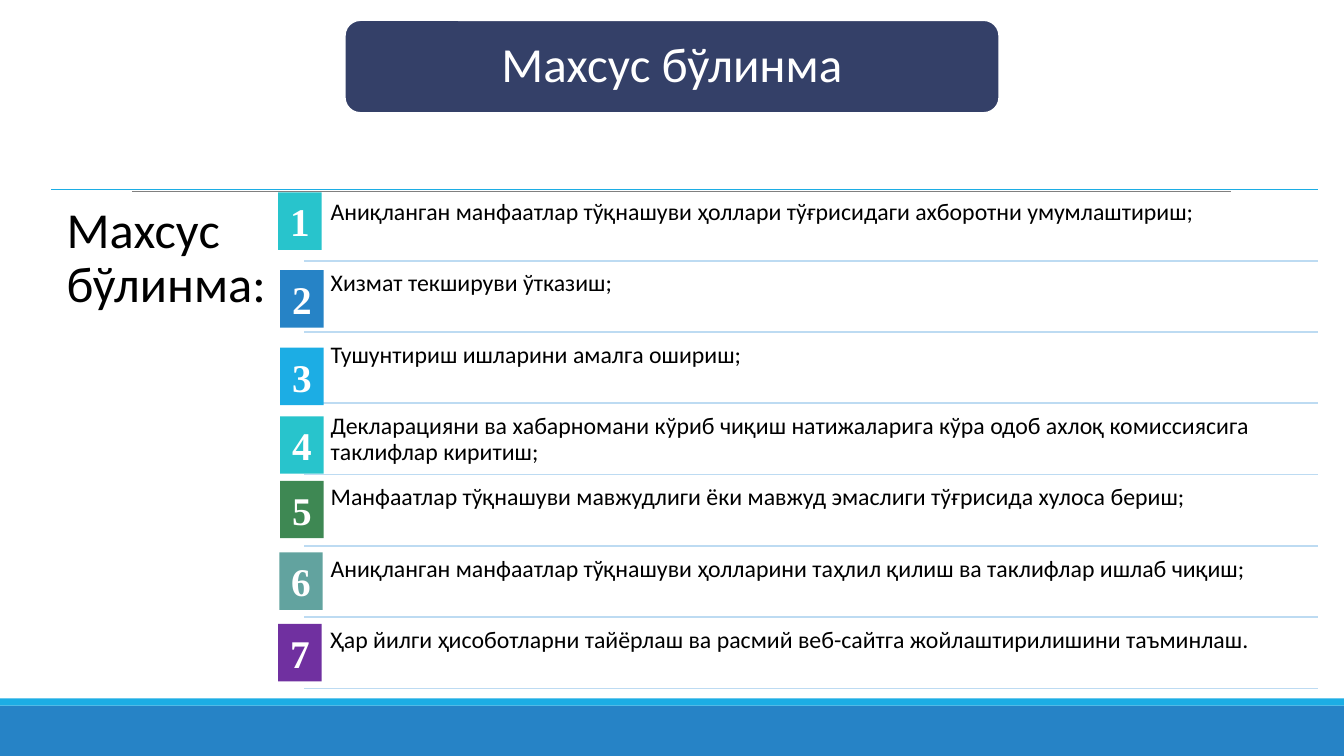
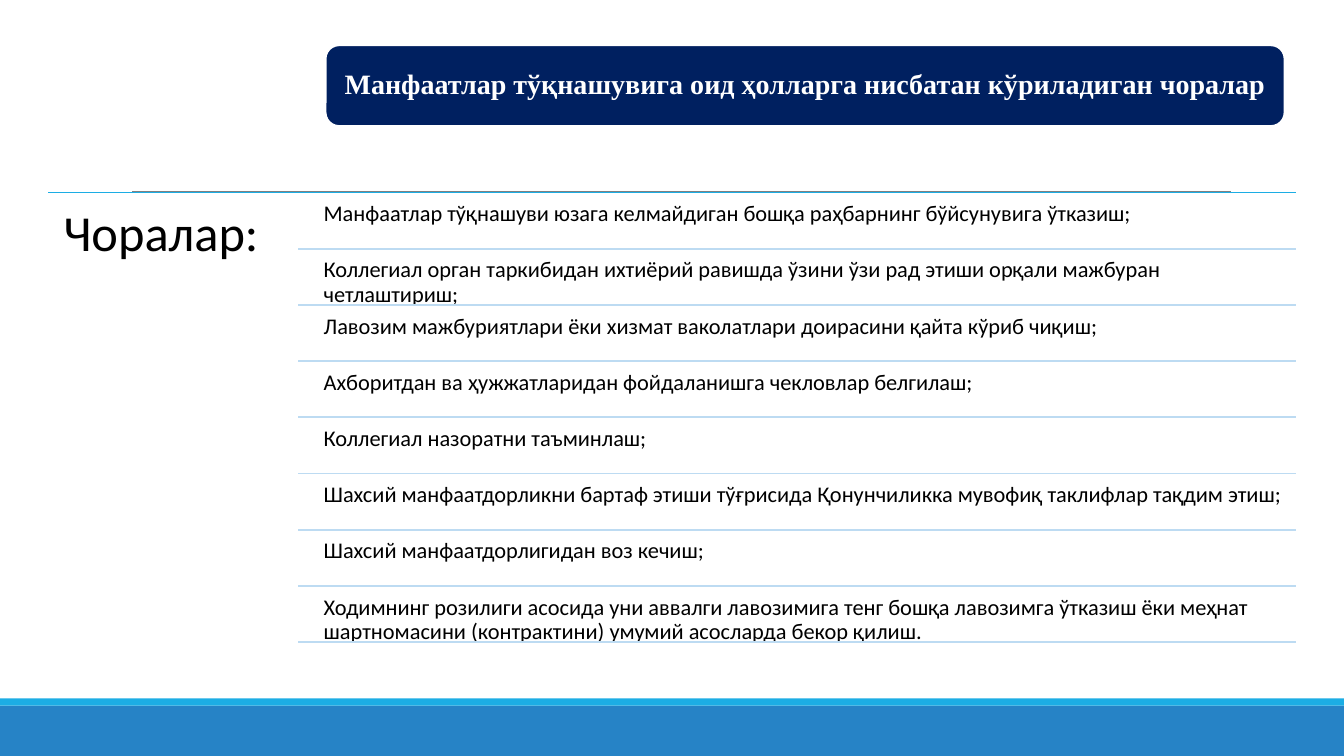
"""Build two slides about the special unit and conflict-of-interest measures."""
from lxml import etree
from pptx import Presentation
from pptx.dml.color import RGBColor
from pptx.enum.shapes import MSO_CONNECTOR as Connector, MSO_SHAPE as Preset
from pptx.enum.text import MSO_ANCHOR as Anchor, MSO_AUTO_SIZE as AutoSize, PP_ALIGN as Align
from pptx.oxml.ns import qn
from pptx.util import Inches, Pt

WIDTH, HEIGHT = 13.33, 7.5
BLUE, CYAN, TEAL, PALE = "2683C6", "1CADE4", "28C4CC", "BDDBF2"
GREY, WHITE, BLACK = "808080", "FFFFFF", "000000"
SANS, SERIF = "Calibri", "Times New Roman"
BADGE_SIZE = (0.43, 0.57)

SECTIONS = [
    {
        "title": "Махсус бўлинма",
        "banner": (3.42, 0.2, 6.49, 0.92), "banner_fill": "344068",
        "title_format": {"size": 35, "font": SANS},
        "heading": "Махсус бўлинма:",
        "left": 0.51, "right": 13.07, "top": 1.88, "bottom": 6.83,
        "rule_left": 3.02, "text_left": 3.21, "size": 17,
        "items": [
            "Аниқланган манфаатлар тўқнашуви ҳоллари тўғрисидаги ахборотни умумлаштириш;",
            "Хизмат текшируви ўтказиш;",
            "Тушунтириш ишларини амалга ошириш;",
            "Декларацияни ва хабарномани кўриб чиқиш натижаларига кўра одоб ахлоқ "
            "комиссиясига таклифлар киритиш;",
            "Манфаатлар тўқнашуви мавжудлиги ёки мавжуд эмаслиги тўғрисида хулоса бериш;",
            "Аниқланган манфаатлар тўқнашуви ҳолларини таҳлил қилиш ва таклифлар ишлаб чиқиш;",
            "Ҳар йилги ҳисоботларни тайёрлаш ва расмий веб-сайтга жойлаштирилишини таъминлаш.",
        ],
        "badges": [
            (2.76, 1.91, TEAL), (2.78, 2.68, BLUE), (2.78, 3.45, CYAN), (2.78, 4.13, TEAL),
            (2.78, 4.77, "3E8853"), (2.77, 5.48, "62A39F"), (2.76, 6.19, "7030A0"),
        ],
    },
    {
        "title": "Манфаатлар тўқнашувига оид ҳолларга нисбатан кўриладиган чоралар",
        "banner": (3.23, 0.45, 9.51, 0.8), "banner_fill": "002060",
        "title_format": {"size": 20, "font": SERIF, "bold": True},
        "heading": "Чоралар:",
        "left": 0.48, "right": 12.85, "top": 1.91, "bottom": 6.37,
        "rule_left": 2.96, "text_left": 3.14, "size": 16,
        "items": [
            "Манфаатлар тўқнашуви юзага келмайдиган бошқа раҳбарнинг бўйсунувига ўтказиш;",
            "Коллегиал орган таркибидан ихтиёрий равишда ўзини ўзи рад этиши орқали "
            "мажбуран четлаштириш;",
            "Лавозим мажбуриятлари ёки хизмат ваколатлари доирасини қайта кўриб чиқиш;",
            "Ахборитдан ва ҳужжатларидан фойдаланишга чекловлар белгилаш;",
            "Коллегиал назоратни таъминлаш;",
            "Шахсий манфаатдорликни бартаф этиши тўғрисида Қонунчиликка мувофиқ "
            "таклифлар тақдим этиш;",
            "Шахсий манфаатдорлигидан воз кечиш;",
            "Ходимнинг розилиги асосида уни аввалги лавозимига тенг бошқа лавозимга ўтказиш "
            "ёки меҳнат шартномасини (контрактини) умумий асосларда бекор қилиш.",
        ],
        "badges": [],
    },
]


def color(code):
    return RGBColor.from_string(code)


def write(holder, text, size, font=SANS, fill=BLACK, bold=False, align=Align.LEFT,
          anchor=Anchor.TOP, inset=0.07, spacing=0.9):
    frame = holder.text_frame
    frame.text = text
    frame.word_wrap = True
    frame.auto_size = AutoSize.NONE
    frame.vertical_anchor = anchor
    frame.margin_left = frame.margin_right = Inches(inset)
    frame.margin_top = frame.margin_bottom = Inches(inset)
    paragraph = frame.paragraphs[0]
    paragraph.alignment = align
    paragraph.line_spacing = spacing
    style = paragraph.runs[0].font
    style.name, style.size, style.bold = font, Pt(size), bold
    style.color.rgb = color(fill)


def add_block(slide, preset, box, fill, outline=None):
    block = slide.shapes.add_shape(preset, *map(Inches, box))
    block.shadow.inherit = False
    block.fill.solid()
    block.fill.fore_color.rgb = color(fill)
    if outline:
        block.line.color.rgb = color(outline)
        block.line.width = Pt(1.25)
    else:
        block.line.fill.background()
    return block


def add_rule(slide, left, right, y, stroke, weight=1.25):
    rule = slide.shapes.add_connector(
        Connector.STRAIGHT, Inches(left), Inches(y), Inches(right), Inches(y))
    rule.line.color.rgb = color(stroke)
    rule.line.width = Pt(weight)
    etree.SubElement(rule.element.spPr, qn("a:effectLst"))
    return rule


def add_text(slide, box, text, size, **style):
    write(slide.shapes.add_textbox(*map(Inches, box)), text, size, **style)


def furnish_layout(layout, slide):
    for placeholder in list(layout.placeholders):
        if placeholder.placeholder_format.idx:
            layout.shapes.element.remove(placeholder.element)
    furniture = [
        add_block(slide, Preset.RECTANGLE, (0, 7, WIDTH, 0.5), BLUE),
        add_block(slide, Preset.RECTANGLE, (0, 6.93, WIDTH, 0.07), CYAN),
        add_rule(slide, 1.31, 12.21, 1.9, GREY, 0.5),
    ]
    for part in furniture:
        layout.shapes.element.append(part.element)


def add_title(slide, section):
    title = slide.shapes.title
    banner = add_block(slide, Preset.ROUNDED_RECTANGLE, section["banner"],
                       section["banner_fill"], WHITE)
    title.element.addprevious(banner.element)
    title.left, title.top, title.width, title.height = map(Inches, section["banner"])
    write(title, section["title"], fill=WHITE, align=Align.CENTER, anchor=Anchor.MIDDLE,
          inset=0.12, **section["title_format"])


def add_list(slide, section):
    left, right, top = section["left"], section["right"], section["top"]
    rule_left, text_left = section["rule_left"], section["text_left"]
    height = section["bottom"] - top
    pitch = height / len(section["items"])
    add_rule(slide, left, right, top, CYAN)
    add_text(slide, (left, top, rule_left - left, height), section["heading"], 36, inset=0.15)
    for row, item in enumerate(section["items"]):
        y = top + row * pitch
        add_text(slide, (text_left, y + 0.05 * pitch, right - text_left, 0.95 * pitch),
                 item, section["size"])
        add_rule(slide, rule_left, right, y + pitch, PALE)
    for number, (x, y, fill) in enumerate(section["badges"], 1):
        badge = add_block(slide, Preset.RECTANGLE, (x, y, *BADGE_SIZE), fill)
        write(badge, str(number), 28, font=SERIF, fill=WHITE, bold=True,
              align=Align.CENTER, anchor=Anchor.MIDDLE, inset=0.05, spacing=1.0)


def main():
    deck = Presentation()
    deck.slide_width, deck.slide_height = Inches(WIDTH), Inches(HEIGHT)
    layout = deck.slide_layouts[5]
    for index, section in enumerate(SECTIONS):
        slide = deck.slides.add_slide(layout)
        if index == 0:
            furnish_layout(layout, slide)
        add_title(slide, section)
        add_list(slide, section)
    deck.save("out.pptx")


if __name__ == "__main__":
    main()
